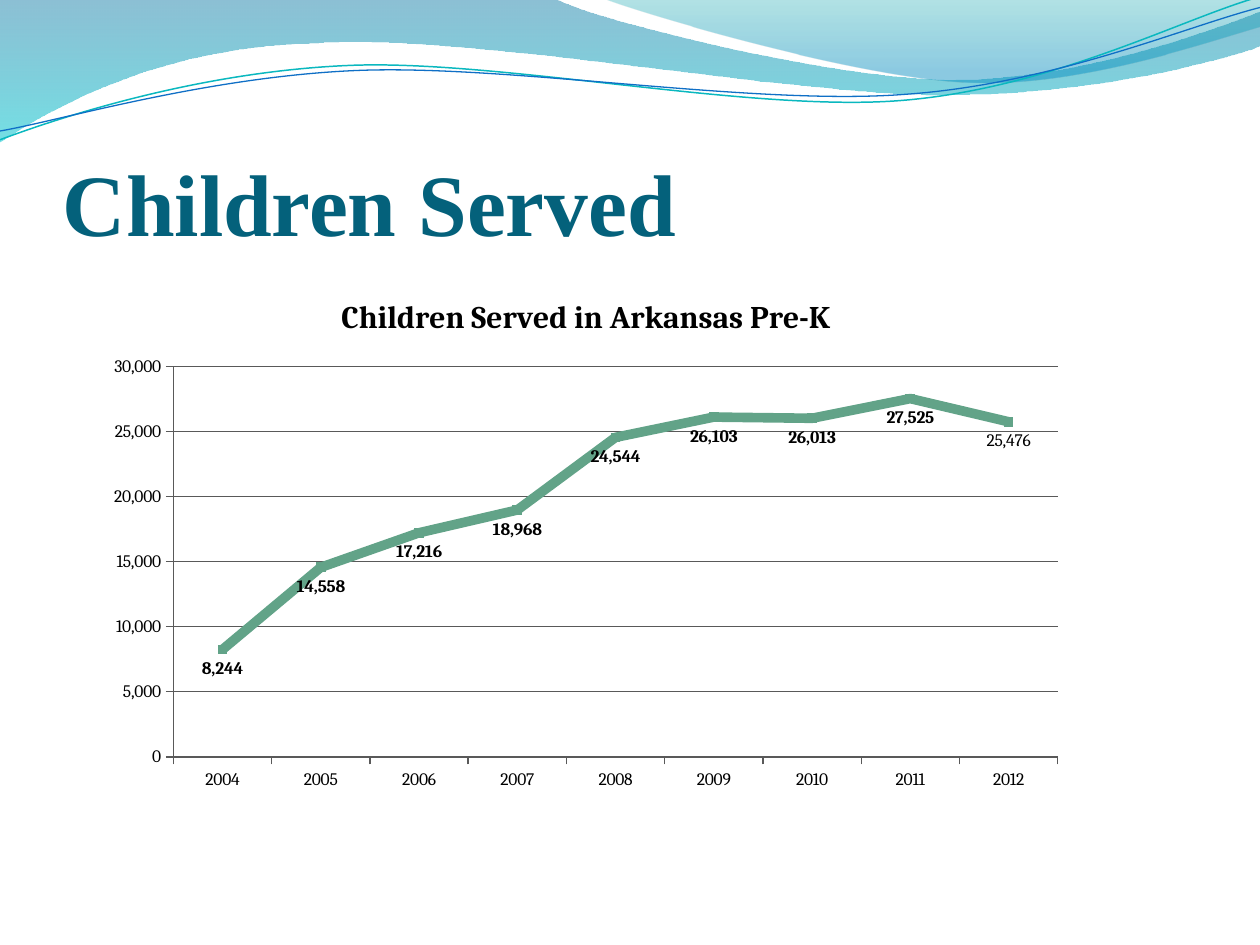
import dataclasses
import math

import lxml.etree
import pptx
import pptx.chart.data
import pptx.dml.color
import pptx.enum.chart
import pptx.enum.text
import pptx.oxml
import pptx.oxml.ns
import pptx.util

Cm = pptx.util.Cm
Pt = pptx.util.Pt
qn = pptx.oxml.ns.qn
TILT = 2.7


@dataclasses.dataclass(frozen=True)
class Theme:
    head: str = "04617B"
    ink: str = "000000"
    line: str = "62A388"
    grid: str = "595959"
    teal: str = "0AB8BF"
    blue: str = "0F6FC6"
    band: tuple = ((0, "0074A1", 45), (1, "00C6CF", 55))
    fold: tuple = ((0, "00A1A9", 30), (0.8, "008BBF", 45))
    serif: str = "Times New Roman"
    font: str = "Cambria"
    big: int = 50
    mid: int = 18
    small: int = 10


theme = Theme()

BAND = [(0, 0), (44, -0.1), (47.6, 1.7, 66.4, 6.3, 75.8, 6.3),
        (85.3, 6.3, 95.8, 2.6, 100, 0.9), (100.1, 3.6),
        (98.3, 4.4, 87, 7.6, 74.6, 7.5), (62.2, 7.5, 38.2, 2.8, 25.7, 3.4),
        (12.9, 3.6, 4.6, 8.3, -0.1, 11.3)]
FOLD = [(47.9, -0.1), (50.9, 1.1, 68.2, 6.2, 76.9, 6.5),
        (85.6, 6.9, 96.1, 3.2, 100, 2.1), (100, 0)]
UPPER = [(0, 11.1), (4.8, 9.3, 15.8, 5.7, 27.7, 5.2),
         (39.5, 4.7, 59.3, 8.9, 71.3, 8), (83.3, 7.1, 93.8, 1.5, 99.8, -0.2)]
LOWER = [(0, 10.4), (4.7, 9.6, 16.4, 6.1, 28.3, 5.6),
         (40.3, 5.1, 59.7, 8.4, 71.7, 7.5), (83.6, 6.7, 94.1, 2.1, 100, 0.6)]


def rgb(code):
    return pptx.dml.color.RGBColor.from_string(code)


def style(font, name, size, color, bold=False):
    font.name = name
    font.size = Pt(size)
    font.bold = bold
    font.color.rgb = rgb(color)


def turn(dot, angle):
    x, y = dot[0] - 50, dot[1] - 5.8
    cos, sin = math.cos(math.radians(angle)), math.sin(math.radians(angle))
    return x * cos - y * sin + 50, x * sin + y * cos + 5.8


def bend(shape, route):
    nodes = list(shape._element.iter(qn("a:lnTo")))
    for step in route[1:]:
        count = len(step) // 2
        part, nodes = nodes[:count], nodes[count:]
        if count == 3:
            curve = lxml.etree.Element(qn("a:cubicBezTo"))
            part[0].addprevious(curve)
            for node in part:
                curve.append(node[0])
                node.getparent().remove(node)


def outline(shapes, box, route, closed, angle=0):
    left, top, width = box[:3]
    dots = [turn(step[i:i + 2], angle)
            for step in route for i in range(0, len(step), 2)]
    dots = [(round(left + x * width / 100), round(top + y * width / 100))
            for x, y in dots]
    pen = shapes.build_freeform(*dots[0])
    pen.add_line_segments(dots[1:], close=closed)
    shape = pen.convert_to_shape()
    bend(shape, route)
    shape.rotation = -angle
    shape.shadow.inherit = False
    return shape


def sheet(shapes, box, route, stops):
    shape = outline(shapes, box, route, True)
    shape.line.fill.background()
    shape.fill.gradient()
    shape.fill.gradient_angle = 270
    for stop, (place, color, _) in zip(shape.fill.gradient_stops, stops):
        stop.position = place
        stop.color.rgb = rgb(color)
    tints = shape._element.spPr.iter(qn("a:srgbClr"))
    for tint, (_, _, alpha) in zip(tints, stops):
        node = lxml.etree.SubElement(tint, qn("a:alpha"))
        node.set("val", str(alpha * 1000))


def strand(shapes, box, route, color, width):
    shape = outline(shapes, box, route, False, TILT)
    shape.fill.background()
    shape.line.color.rgb = rgb(color)
    shape.line.width = Pt(width)


def waves(slide, box):
    sheet(slide.shapes, box, BAND, theme.band)
    sheet(slide.shapes, box, FOLD, theme.fold)
    pair = slide.shapes.add_group_shape().shapes
    strand(pair, box, UPPER, theme.teal, 0.85)
    strand(pair, box, LOWER, theme.blue, 0.75)


def heading(slide, box, text):
    frame = slide.shapes.add_textbox(*box).text_frame
    frame.word_wrap = True
    frame.vertical_anchor = pptx.enum.text.MSO_ANCHOR.BOTTOM
    frame.margin_left = frame.margin_right = frame.margin_bottom = 0
    frame.margin_top = Cm(0.13)
    run = frame.paragraphs[0].add_run()
    run.text = text
    style(run.font, theme.serif, theme.big, theme.head, True)


def place(chart, **sides):
    area = chart._chartSpace.chart.plotArea
    for old in area.findall(qn("c:layout")):
        area.remove(old)
    layout = pptx.oxml.parse_xml(
        '<c:layout %s><c:manualLayout/></c:layout>' % pptx.oxml.ns.nsdecls("c"))
    rules = {"layoutTarget": "inner", "xMode": "edge", "yMode": "edge", **sides}
    for name, value in rules.items():
        node = lxml.etree.SubElement(layout[0], qn("c:" + name))
        node.set("val", str(value))
    area.insert(0, layout)


def axes(chart):
    outside = pptx.enum.chart.XL_TICK_MARK.OUTSIDE
    for axis in (chart.category_axis, chart.value_axis):
        axis.major_tick_mark = outside
        axis.format.line.color.rgb = rgb(theme.grid)
        style(axis.tick_labels.font, theme.font, theme.small, theme.ink)
    scale = chart.value_axis
    scale.minimum_scale, scale.maximum_scale = 0, 30000
    scale.major_unit = 5000
    scale.tick_labels.number_format = "#,##0"
    scale.tick_labels.number_format_is_linked = False
    scale.major_gridlines.format.line.color.rgb = rgb(theme.grid)


def trend(slide, box, title, years, counts, last):
    data = pptx.chart.data.CategoryChartData(number_format="#,##0")
    data.categories = years
    data.add_series("Series 1", counts)
    kind = pptx.enum.chart.XL_CHART_TYPE.LINE_MARKERS_STACKED
    chart = slide.shapes.add_chart(kind, *box, data).chart
    style(chart.font, theme.font, theme.small, theme.ink)
    chart.has_legend = False
    run = chart.chart_title.text_frame.paragraphs[0].add_run()
    run.text = title
    style(run.font, theme.font, theme.mid, theme.ink, True)
    place(chart, x=0.08, y=3 / 17, w=0.9, h=0.74)
    axes(chart)

    chart.plots[0].vary_by_categories = False
    line = chart.plots[0].series[0]
    line.smooth = False
    line.format.line.color.rgb = rgb(theme.line)
    line.format.line.width = Pt(5.5)
    line.marker.style = pptx.enum.chart.XL_MARKER_STYLE.SQUARE
    line.marker.size = 5
    line.marker.format.fill.solid()
    line.marker.format.fill.fore_color.rgb = rgb(theme.line)
    line.marker.format.line.color.rgb = rgb(theme.line)

    below = pptx.enum.chart.XL_LABEL_POSITION.BELOW
    labels = line.data_labels
    labels.show_value = True
    labels.position = below
    labels.number_format = "#,##0"
    labels.number_format_is_linked = False
    style(labels.font, theme.font, theme.small, theme.ink, True)
    label = line.points[len(counts) - 1].data_label
    run = label.text_frame.paragraphs[0].add_run()
    run.text = last
    style(run.font, theme.font, theme.small, theme.ink)
    label.position = below


def main():
    deck = pptx.Presentation()
    deck.slide_width, deck.slide_height = Cm(25.4), Cm(19.05)
    slide = deck.slides.add_slide(deck.slide_layouts[6])
    waves(slide, (0, 0, deck.slide_width, Cm(2.87)))
    trend(slide, (Cm(1.91), Cm(5.51), Cm(19.81), Cm(10.64)),
          "Children Served in Arkansas Pre-K",
          [str(year) for year in range(2004, 2013)],
          [8244, 14558, 17216, 18968, 24544, 26103, 26013, 27525, 25746],
          "25,476")
    heading(slide, (Cm(1.27), Cm(1.95), Cm(23.06), Cm(3.18)),
            "Children Served")
    deck.save("out.pptx")


if __name__ == "__main__":
    main()
